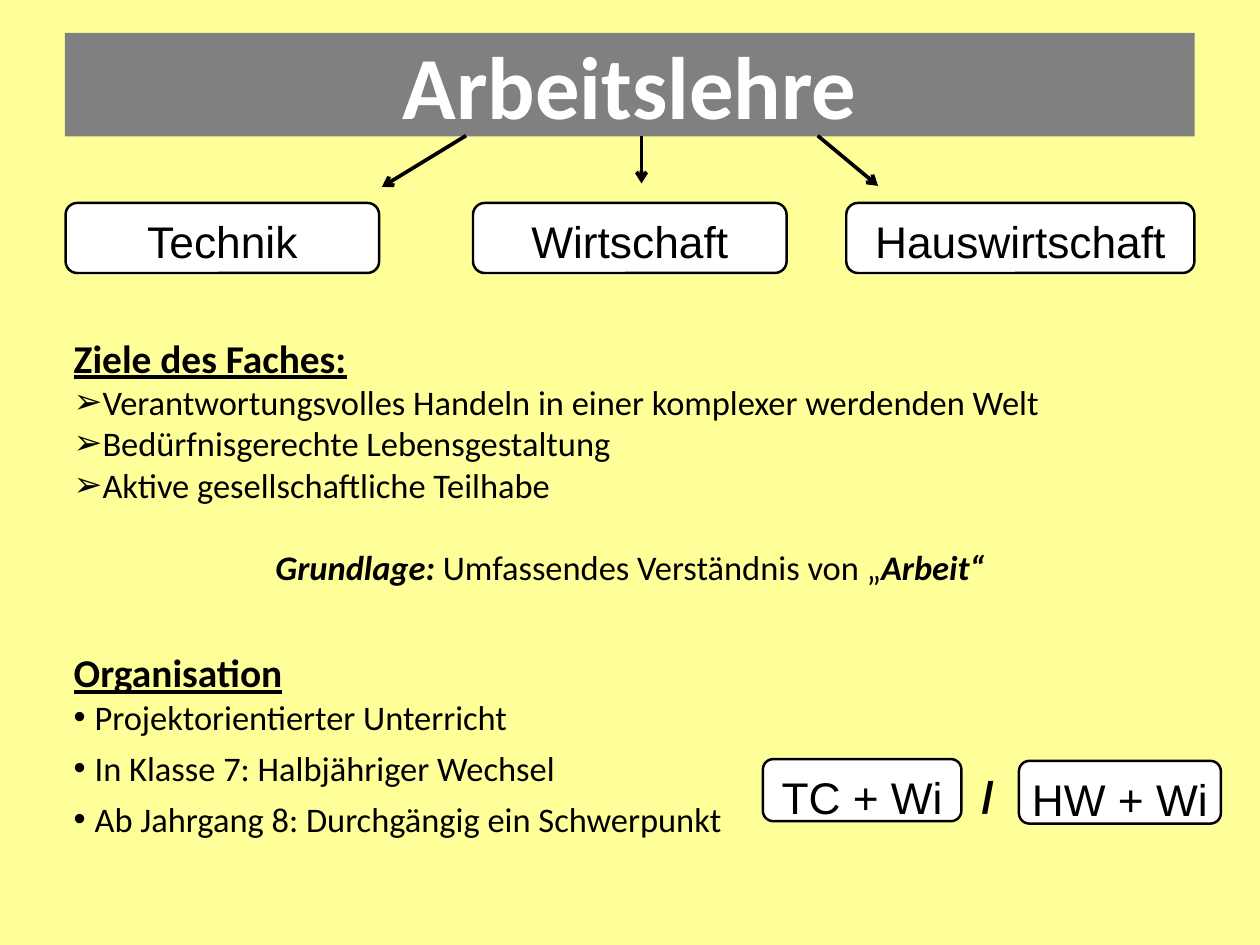
from dataclasses import dataclass

from lxml.etree import SubElement
from pptx import Presentation
from pptx.dml.color import RGBColor
from pptx.enum.shapes import MSO_CONNECTOR as Connector, MSO_SHAPE as Preset
from pptx.enum.text import MSO_ANCHOR as Anchor, MSO_AUTO_SIZE as AutoSize, PP_ALIGN as Align
from pptx.oxml.ns import qn
from pptx.slide import Slide
from pptx.text.text import _Paragraph as Paragraph, _Run as Run
from pptx.util import Cm, Pt


@dataclass(frozen=True)
class Theme:
    page: RGBColor = RGBColor(0xFF, 0xFF, 0x99)
    banner: RGBColor = RGBColor(0x80, 0x80, 0x80)
    light: RGBColor = RGBColor(0xFF, 0xFF, 0xFF)
    ink: RGBColor = RGBColor(0, 0, 0)
    text_font: str = "Calibri"
    label_font: str = "Arial"
    title_size: int = 72
    label_size: int = 36
    heading_size: int = 32
    body_size: int = 28
    line_spacing: float = 1.07


@dataclass(frozen=True)
class Frame:
    left: float
    top: float
    width: float
    height: float


@dataclass(frozen=True)
class Label:
    text: str
    frame: Frame


@dataclass(frozen=True)
class Arrow:
    start: tuple[float, float]
    end: tuple[float, float]


@dataclass(frozen=True)
class Span:
    text: str
    emphasis: bool = False


@dataclass(frozen=True)
class Line:
    spans: tuple[Span, ...]
    heading: bool = False
    align: Align = Align.LEFT
    spacing: float = 1.0
    before: float = 0
    after: float = 0
    bullet: str = ""
    hang: float = 0


THEME = Theme()
TITLE_FRAME = Frame(1.86, 0.94, 32.39, 2.97)
BODY_FRAME = Frame(1.86, 9.35, 32.4, 14.98)
SLASH = Label("/", Frame(27.89, 21.82, 3.73, 1.8))

LABELS = (
    Label("Technik", Frame(1.88, 5.82, 8.99, 2.01)),
    Label("Wirtschaft", Frame(13.56, 5.82, 8.99, 2.01)),
    Label("Hauswirtschaft", Frame(24.26, 5.82, 9.98, 2.01)),
    Label("TC + Wi", Frame(21.87, 21.77, 5.69, 1.78)),
    Label("HW + Wi", Frame(29.21, 21.82, 5.79, 1.8)),
)

ARROWS = (
    Arrow((13.36, 3.89), (10.95, 5.36)),
    Arrow((23.44, 3.89), (25.17, 5.33)),
    Arrow((18.39, 3.89), (18.39, 5.26)),
)


def heading(text: str, before: float = 0) -> Line:
    return Line((Span(text),), heading=True, spacing=THEME.line_spacing, before=before)


def goal(text: str) -> Line:
    return Line((Span(text),), bullet="➢", hang=0.79)


def rule(text: str) -> Line:
    return Line((Span(text),), after=8, bullet="•", hang=0.6)


BODY_LINES = (
    heading("Ziele des Faches:"),
    goal("Verantwortungsvolles Handeln in einer komplexer werdenden Welt"),
    goal("Bedürfnisgerechte Lebensgestaltung"),
    goal("Aktive gesellschaftliche Teilhabe"),
    Line(
        (Span("Grundlage: ", True), Span("Umfassendes Verständnis von „"), Span("Arbeit“", True)),
        align=Align.CENTER,
        spacing=THEME.line_spacing,
        before=31,
    ),
    heading("Organisation", before=47),
    rule("Projektorientierter Unterricht"),
    rule("In Klasse 7: Halbjähriger Wechsel"),
    rule("Ab Jahrgang 8: Durchgängig ein Schwerpunkt"),
)


def place(shape, frame: Frame) -> None:
    shape.left, shape.top = Cm(frame.left), Cm(frame.top)
    shape.width, shape.height = Cm(frame.width), Cm(frame.height)


def style(run: Run, font: str, size: int, color: RGBColor, bold: bool = False) -> None:
    run.font.name = font
    run.font.size = Pt(size)
    run.font.color.rgb = color
    run.font.bold = bold


def set_bullet(para: Paragraph, line: Line) -> None:
    properties = para._p.get_or_add_pPr()
    properties.set("marL", str(Cm(line.hang)))
    properties.set("indent", str(-Cm(line.hang)))
    if line.bullet:
        SubElement(properties, qn("a:buFont")).set("typeface", THEME.label_font)
        SubElement(properties, qn("a:buChar")).set("char", line.bullet)
    else:
        SubElement(properties, qn("a:buNone"))


def write_line(para: Paragraph, line: Line) -> None:
    para.alignment = line.align
    para.line_spacing = line.spacing
    para.space_before = Pt(line.before)
    para.space_after = Pt(line.after)
    set_bullet(para, line)
    size = THEME.heading_size if line.heading else THEME.body_size
    for span in line.spans:
        run = para.add_run()
        run.text = span.text
        style(run, THEME.text_font, size, THEME.ink, line.heading or span.emphasis)
        run.font.italic = span.emphasis
        run.font.underline = line.heading


def fill_title(page: Slide) -> None:
    title = page.shapes.title
    place(title, TITLE_FRAME)
    title.fill.solid()
    title.fill.fore_color.rgb = THEME.banner
    frame = title.text_frame
    frame.text = "Arbeitslehre"
    frame.auto_size = AutoSize.NONE
    frame.vertical_anchor = Anchor.MIDDLE
    frame.margin_left = frame.margin_right = frame.margin_top = frame.margin_bottom = Cm(0.15)
    para = frame.paragraphs[0]
    para.alignment = Align.CENTER
    style(para.runs[0], THEME.text_font, THEME.title_size, THEME.light, bold=True)


def fill_body(page: Slide) -> None:
    body = page.placeholders[1]
    place(body, BODY_FRAME)
    frame = body.text_frame
    frame.auto_size = AutoSize.NONE
    frame.vertical_anchor = Anchor.TOP
    for index, line in enumerate(BODY_LINES):
        write_line(frame.add_paragraph() if index else frame.paragraphs[0], line)


def write_label(shape, text: str, align: Align, bold: bool = False) -> None:
    frame = shape.text_frame
    frame.text = text
    frame.word_wrap = True
    frame.vertical_anchor = Anchor.TOP
    para = frame.paragraphs[0]
    para.alignment = align
    para.line_spacing = THEME.line_spacing
    style(para.runs[0], THEME.label_font, THEME.label_size, THEME.ink, bold)


def draw_label(page: Slide, label: Label) -> None:
    box = page.shapes.add_shape(Preset.ROUNDED_RECTANGLE, 0, 0, 0, 0)
    place(box, label.frame)
    box.shadow.inherit = False
    box.fill.solid()
    box.fill.fore_color.rgb = THEME.light
    box.line.color.rgb = THEME.ink
    box.line.width = Pt(2)
    write_label(box, label.text, Align.CENTER)


def draw_arrow(page: Slide, arrow: Arrow) -> None:
    ends = [Cm(value) for value in (*arrow.start, *arrow.end)]
    connector = page.shapes.add_connector(Connector.STRAIGHT, *ends)
    connector.line.color.rgb = THEME.ink
    connector.line.width = Pt(3)
    SubElement(connector.line._get_or_add_ln(), qn("a:tailEnd")).set("type", "arrow")
    SubElement(connector._element.spPr, qn("a:effectLst"))


def main() -> None:
    deck = Presentation()
    deck.slide_width, deck.slide_height = Cm(36.12), Cm(27.1)
    page = deck.slides.add_slide(deck.slide_layouts[1])
    page.background.fill.solid()
    page.background.fill.fore_color.rgb = THEME.page
    fill_title(page)
    fill_body(page)
    for label in LABELS:
        draw_label(page, label)
    for arrow in ARROWS:
        draw_arrow(page, arrow)
    slash = page.shapes.add_textbox(0, 0, 0, 0)
    place(slash, SLASH.frame)
    write_label(slash, SLASH.text, Align.LEFT, bold=True)
    deck.save("out.pptx")


if __name__ == "__main__":
    main()
